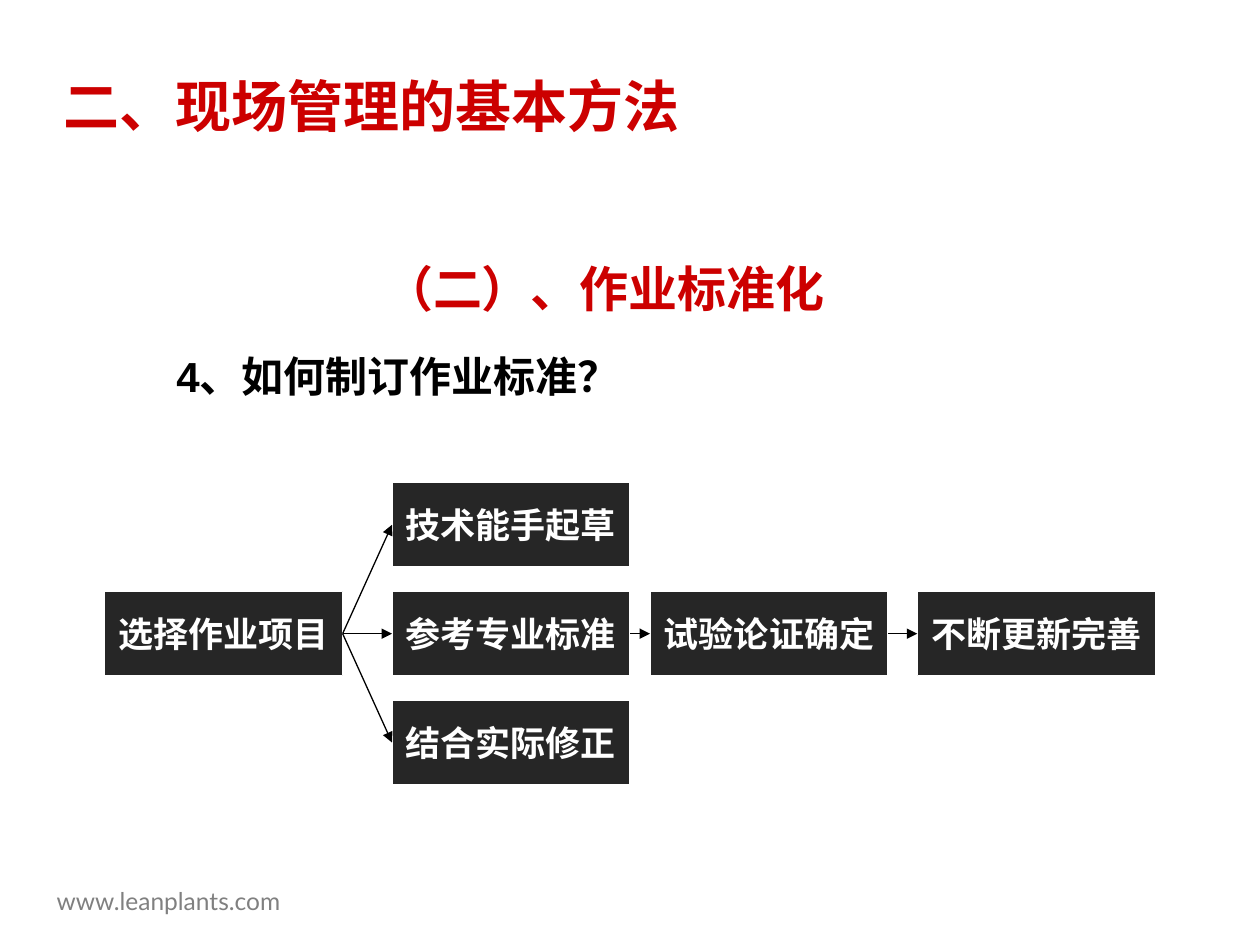
from dataclasses import dataclass

from lxml import etree
from pptx import Presentation
from pptx.dml.color import RGBColor
from pptx.enum import shapes, text
from pptx.oxml import ns
from pptx.util import Pt

RED = RGBColor(0xCC, 0x00, 0x00)
BLACK = RGBColor(0x00, 0x00, 0x00)
WHITE = RGBColor(0xFF, 0xFF, 0xFF)
GRAY = RGBColor(0x80, 0x80, 0x80)
CHARCOAL = RGBColor(0x26, 0x26, 0x26)

BOX_W, BOX_H = 136, 48.2
COLUMNS = (59.8, 224, 371.5, 524.2)
ROW_TOP, ROW_STEP = 275.8, 62.2
RIGHT, LEFT = 3, 1


@dataclass(frozen=True)
class Step:
    label: str
    column: int
    row: int


STEPS = (
    Step("选择作业项目", 0, 1),
    Step("技术能手起草", 1, 0),
    Step("参考专业标准", 1, 1),
    Step("结合实际修正", 1, 2),
    Step("试验论证确定", 2, 1),
    Step("不断更新完善", 3, 1),
)
LINKS = ((0, 1), (0, 2), (0, 3), (2, 4), (4, 5))


def write(sp, content: str, *, size: float, color: RGBColor, font: str = "Lato",
          bold: bool = True, align=text.PP_ALIGN.LEFT,
          anchor=text.MSO_ANCHOR.TOP, wrap: bool = True, hanging: float = 0) -> None:
    tf = sp.text_frame
    tf.auto_size = text.MSO_AUTO_SIZE.NONE
    tf.word_wrap = wrap
    tf.vertical_anchor = anchor
    p = tf.paragraphs[0]
    p.alignment = align
    p.space_before = Pt(0)
    if hanging:
        pPr = p._p.get_or_add_pPr()
        pPr.set("marL", str(Pt(hanging)))
        pPr.set("indent", str(-Pt(hanging)))
        etree.SubElement(pPr, ns.qn("a:buNone"))
    r = p.add_run()
    r.text = content
    r.font.name = font
    r.font.size = Pt(size)
    r.font.bold = bold
    r.font.color.rgb = color


def place(sp, left: float, top: float, width: float, height: float) -> None:
    sp.left, sp.top, sp.width, sp.height = map(Pt, (left, top, width, height))


def add_text(s, left: float, top: float, width: float, height: float,
             content: str, **fmt) -> None:
    sp = s.shapes.add_textbox(Pt(left), Pt(top), Pt(width), Pt(height))
    write(sp, content, **fmt)


def add_step(s, step: Step):
    sp = s.shapes.add_shape(
        shapes.MSO_SHAPE.FLOWCHART_PROCESS,
        Pt(COLUMNS[step.column]), Pt(ROW_TOP + step.row * ROW_STEP),
        Pt(BOX_W), Pt(BOX_H))
    sp.shadow.inherit = False
    sp.fill.solid()
    sp.fill.fore_color.rgb = CHARCOAL
    sp.line.color.rgb = WHITE
    sp.line.width = Pt(0.75)
    write(sp, step.label, size=20, color=WHITE, align=text.PP_ALIGN.CENTER,
          anchor=text.MSO_ANCHOR.MIDDLE, wrap=False)
    return sp


def add_arrow(s, start, end) -> None:
    c = s.shapes.add_connector(shapes.MSO_CONNECTOR.STRAIGHT, 0, 0, 0, 0)
    c.begin_connect(start, RIGHT)
    c.end_connect(end, LEFT)
    c.line.color.rgb = BLACK
    c.line.width = Pt(0.75)
    etree.SubElement(c.line._get_or_add_ln(), ns.qn("a:tailEnd"), type="triangle")
    etree.SubElement(c._element.spPr, ns.qn("a:effectLst"))


def main() -> None:
    prs = Presentation()
    prs.slide_width, prs.slide_height = Pt(720), Pt(540)
    s = prs.slides.add_slide(prs.slide_layouts[1])

    title, body = s.shapes.title, s.placeholders[1]
    place(title, -94.3, 15.1, 613.4, 90)
    write(title, "二、现场管理的基本方法", size=32, color=RED, font="Arial",
          align=text.PP_ALIGN.CENTER, anchor=text.MSO_ANCHOR.MIDDLE)
    place(body, 93.6, 196.6, 612, 324)
    write(body, "4、如何制订作业标准？", size=24, color=BLACK, font="Arial", hanging=27)

    add_text(s, 25.2, 502.6, 275, 24.5, "www.leanplants.com",
             size=14, color=GRAY, bold=False)
    add_text(s, 212.4, 144, 267.8, 41, "（二）、作业标准化",
             size=28, color=RED, wrap=False)

    boxes = [add_step(s, step) for step in STEPS]
    for start, end in LINKS:
        add_arrow(s, boxes[start], boxes[end])

    prs.save("out.pptx")


if __name__ == "__main__":
    main()
